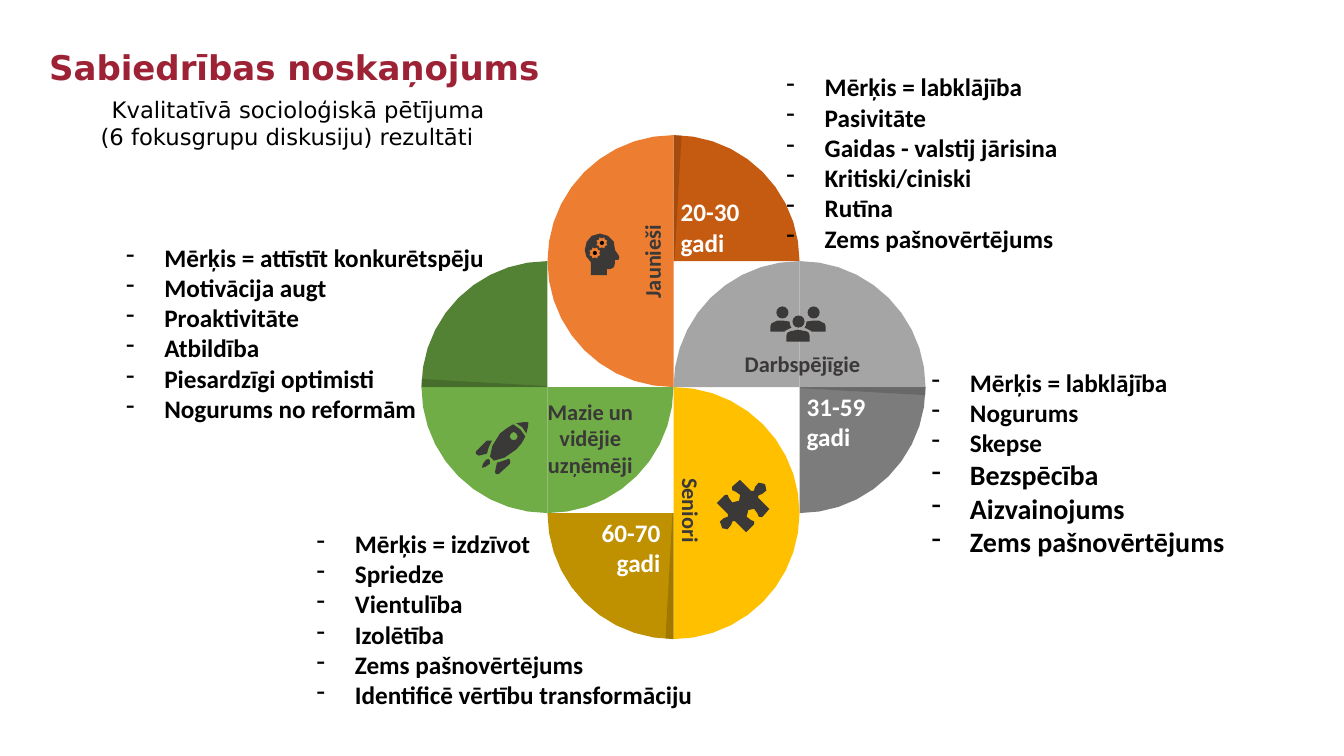
import math
import pptx
import pptx.dml.color
import pptx.enum.shapes
import pptx.enum.text
import pptx.oxml
import pptx.oxml.ns
import pptx.util
from dataclasses import dataclass

Inches = pptx.util.Inches
Align = pptx.enum.text.PP_ALIGN
Anchor = pptx.enum.text.MSO_ANCHOR


@dataclass(frozen=True)
class Theme:
    heading_font: str = "DejaVu Sans"
    body_font: str = "Calibri"
    title: str = "9D2235"
    text: str = "000000"
    icon: str = "3B3838"
    light: str = "FFFFFF"
    title_size: float = 24.3
    subtitle_size: float = 16.2
    label_size: int = 16
    body_size: int = 18
    large_size: int = 20


CENTRE_X, CENTRE_Y, RADIUS = 6.68, 3.84, 1.25
ARC_STEPS, CURVE_STEPS, GEAR_POINTS = 10, 2, 16
QUADRANTS = [(1, -1), (-1, -1), (-1, 1)]
WEDGE = [(0, -1.25), (0.01, -1.25), (0.08, -2.5), (0, -2.5)]
ARMS = [
    ("C55A11", "ED7D31", "20-30\vgadi", Align.LEFT, Anchor.BOTTOM),
    ("7C7C7C", "A5A5A5", "31-59\vgadi", Align.LEFT, Anchor.TOP),
    ("BF9000", "FFC000", "60-70\vgadi", Align.RIGHT, Anchor.TOP),
    ("548235", "70AD47", "", Align.LEFT, Anchor.TOP),
]
LABELS = [
    ("Mazie un vidējie uzņēmēji", (5.04, 3.89, 1.63, 0.91), 0, True),
    ("Jaunieši", (5.97, 2.41, 0.99, 0.37), 270, False),
    ("Darbspējīgie", (7.28, 3.42, 1.36, 0.37), 0, False),
    ("Seniori", (6.43, 4.88, 0.85, 0.37), 90, False),
]
FINDINGS = [
    ((9.24, 3.57, 3.25, 2.02), 3, ["Mērķis = labklājība", "Nogurums", "Skepse",
     "Bezspēcība", "Aizvainojums", "Zems pašnovērtējums"]),
    ((1.25, 2.33, 3.88, 1.92), 6, ["Mērķis = attīstīt konkurētspēju", "Motivācija augt",
     "Proaktivitāte", "Atbildība", "Piesardzīgi optimisti", "Nogurums no reformām"]),
    ((3.14, 5.17, 4.08, 1.92), 6, ["Mērķis = izdzīvot", "Spriedze", "Vientulība",
     "Izolētība", "Zems pašnovērtējums", "Identificē vērtību transformāciju"]),
    ((7.8, 0.64, 3.02, 1.92), 6, ["Mērķis = labklājība", "Pasivitāte",
     "Gaidas - valstij jārisina", "Kritiski/ciniski", "Rutīna", "Zems pašnovērtējums"]),
]
PUZZLE = """M 34 40 C 29 40 28 34 31 31 L 31 30 C 35 27 40 29 40 33 C 40 36 43 39 45 37
L 52 29 L 41 18 C 39 17 42 14 45 14 C 49 14 51 8 48 5 L 47 4 C 44 1 38 3 38 7
C 38 10 36 13 34 11 L 23 0 L 15 7 C 13 9 16 12 19 12 C 23 12 25 17 22 21 L 21 21
C 18 24 12 23 12 18 C 12 16 10 13 8 15 L 0 23 L 11 34 C 13 36 10 38 7 38
C 3 38 1 44 5 47 L 5 48 C 8 51 14 49 14 45 C 14 42 17 39 18 41 L 29 52 L 37 44
C 39 42 36 40 34 40"""
ROCKET = [
    "M 52 1 C 51 0 45 1 40 2 L 46 6 L 50 12 C 51 7 53 2 52 1",
    "M 16 19 L 13 19 L 11 19 L 0 30 C -1 31 0 34 3 34 L 11 32 C 12 28 13 24 16 19",
    "M 33 37 C 29 39 24 40 21 41 L 19 50 C 18 52 21 54 23 52 L 34 42 L 34 39",
    """M 37 3 C 33 5 29 8 24 12 C 17 20 14 29 14 35 L 18 39 C 23 38 33 36 40 28
    C 45 24 47 19 49 15 L 44 8 L 37 3
    M 40 18 C 39 19 36 19 35 18 C 33 16 33 14 35 12 C 36 10 39 10 40 12 C 42 14 42 16 40 18""",
    "M 14 39 C 13 38 13 36 10 38 C 8 40 5 45 6 46 C 7 47 12 44 14 42 L 14 39",
]
FRONT_BODY = "M 23 12 L 23 6 L 22 3 C 21 2 19 1 16 1 L 12 0 L 7 1 C 5 1 3 2 1 3 L 0 6 L 0 12"
BACK_BODY = """M 20 3 C 18 2 16 1 14 0 L 9 0 L 2 1 C 2 4 1 6 0 7 C 2 8 4 9 6 10
L 7 11 L 21 11 L 21 6 L 20 3"""
HEAD = """M 34 22 L 30 16 C 31 10 28 5 23 2 C 18 -1 12 -1 7 2 C 3 5 0 10 0 16
C 0 20 2 25 6 28 L 6 41 L 22 41 L 22 35 L 25 35 C 26 35 28 34 29 33
L 30 29 L 30 26 L 33 26 C 34 25 35 24 34 22"""
GEARS = [(5.97, 2.41), (5.9, 2.51)]


def turn(x, y, quarters):
    for _ in range(quarters):
        x, y = -y, x
    return x, y


def trace(outline_text, x, y, side=1):
    loops, tokens = [], iter(outline_text.split())
    for command in tokens:
        nums = [float(next(tokens)) for _ in range(6 if command == "C" else 2)]
        pts = [(x + side * a / 100, y + b / 100) for a, b in zip(nums[::2], nums[1::2])]
        if command == "M":
            loops.append(pts)
        elif command == "L":
            loops[-1] += pts
        else:
            curve = [loops[-1][-1]] + pts
            for i in range(1, CURVE_STEPS + 1):
                t = i / CURVE_STEPS
                weights = [(1 - t) ** 3, 3 * t * (1 - t) ** 2, 3 * t * t * (1 - t), t ** 3]
                loops[-1].append(tuple(sum(w * p[axis] for w, p in zip(weights, curve))
                                       for axis in (0, 1)))
    return loops


def gear(x, y):
    pts = []
    for i in range(GEAR_POINTS):
        r, angle = (0.06 if i % 2 else 0.045), math.tau * i / GEAR_POINTS
        pts.append((x + r * math.cos(angle), y + r * math.sin(angle)))
    return pts


class Canvas:
    def __init__(self, s, theme):
        self.s, self.theme = s, theme

    def paint(self, sp, color, alpha=None):
        sp.shadow.inherit = False
        sp.fill.solid()
        sp.fill.fore_color.rgb = pptx.dml.color.RGBColor.from_string(color)
        sp.line.fill.background()
        if alpha:
            clr = sp._element.spPr.find(".//" + pptx.oxml.ns.qn("a:srgbClr"))
            clr.append(pptx.oxml.parse_xml(
                f'<a:alpha {pptx.oxml.ns.nsdecls("a")} val="{alpha * 1000}"/>'))
        return sp

    def outline(self, loops, color, alpha=None):
        loops = [[(Inches(x), Inches(y)) for x, y in loop] for loop in loops]
        builder = self.s.shapes.build_freeform(*loops[0][0], scale=1.0)
        for i, loop in enumerate(loops):
            if i:
                builder.move_to(*loop[0])
            builder.add_line_segments(loop[1:], close=True)
        return self.paint(builder.convert_to_shape(), color, alpha)

    def dot(self, x, y, size, color):
        oval = pptx.enum.shapes.MSO_SHAPE.OVAL
        box = [Inches(v) for v in (x - size / 2, y - size / 2, size, size)]
        self.paint(self.s.shapes.add_shape(oval, *box), color)

    def frame(self, sp, insets, anchor, wrap=True):
        tf = sp.text_frame
        tf.word_wrap, tf.vertical_anchor = wrap, anchor
        tf.margin_left, tf.margin_top, tf.margin_right, tf.margin_bottom = map(Inches, insets)
        return tf

    def box(self, at, insets, anchor, wrap=True):
        sp = self.s.shapes.add_textbox(*map(Inches, at))
        return sp, self.frame(sp, insets, anchor, wrap)

    def style(self, p, size, color, bold=True, font=None, align=Align.LEFT):
        p.alignment = align
        for r in p.runs:
            r.font.name, r.font.size, r.font.bold = font or self.theme.body_font, pptx.util.Pt(size), bold
            r.font.color.rgb = pptx.dml.color.RGBColor.from_string(color)

    def indent(self, p, left, hanging=0, bullet=None):
        pPr = p._p.get_or_add_pPr()
        pPr.set("marL", str(Inches(left)))
        pPr.set("indent", str(Inches(-hanging)))
        if bullet:
            pPr.append(pptx.oxml.parse_xml(
                f'<a:buChar {pptx.oxml.ns.nsdecls("a")} char="{bullet}"/>'))

    def heading(self):
        t = self.theme
        tf = self.box((0.39, 0.46, 11.5, 1.45), (0.1, 0, 0.1, 0), Anchor.TOP)[1]
        tf.text = ("Sabiedrības noskaņojums\nKvalitatīvā socioloģiskā pētījuma\n"
                   "(6 fokusgrupu diskusiju) rezultāti")
        title, *subtitle = tf.paragraphs
        self.style(title, t.title_size, t.title, font=t.heading_font)
        for p, left in zip(subtitle, (0.62, 0.51)):
            self.style(p, t.subtitle_size, t.text, False, t.heading_font)
            self.indent(p, left)
        subtitle[0].space_before = pptx.util.Pt(6)

    def arm(self, quarters, dark, light, ages, align, anchor):
        dx, dy = turn(0, -RADIUS, quarters)
        hub = (CENTRE_X + dx, CENTRE_Y + dy)
        angles = [math.pi / 2 * i / ARC_STEPS for i in range(ARC_STEPS + 1)]
        for quadrant, color in zip(QUADRANTS, (dark, light, light)):
            sx, sy = turn(*quadrant, quarters)
            arc = [(hub[0] + sx * RADIUS * math.cos(a), hub[1] + sy * RADIUS * math.sin(a))
                   for a in angles]
            sp = self.outline([[hub] + arc], color)
            if color == dark and ages:
                right = 0.13 if align == Align.RIGHT else 0.07
                tf = self.frame(sp, (0.07, 0.04, right, 0.04), anchor)
                tf.text = ages
                self.style(tf.paragraphs[0], self.theme.body_size, self.theme.light, align=align)
        wedge = [turn(x, y, quarters) for x, y in WEDGE]
        self.outline([[(CENTRE_X + x, CENTRE_Y + y) for x, y in wedge]], self.theme.text, 16)

    def label(self, text, at, rotation, wrap):
        sp, tf = self.box(at, (0.1, 0.05, 0.1, 0.05), Anchor.MIDDLE, wrap)
        sp.rotation, tf.text = rotation, text
        self.style(tf.paragraphs[0], self.theme.label_size, self.theme.icon, align=Align.CENTER)

    def findings(self, at, regular, items):
        tf = self.box(at, (0, 0.05, 0, 0.05), Anchor.BOTTOM)[1]
        tf.text = "\n".join(items)
        for i, p in enumerate(tf.paragraphs):
            size = self.theme.body_size if i < regular else self.theme.large_size
            self.style(p, size, self.theme.text)
            self.indent(p, 0.38, 0.38, "-")

    def icons(self):
        color = self.theme.icon
        self.outline(trace(PUZZLE, 7.11, 4.76), color)
        for part in ROCKET:
            self.outline(trace(part, 4.72, 4.18), color)
        for x, y in ((7.76, 3.1), (8.07, 3.1), (7.92, 3.19)):
            self.dot(x, y, 0.12, color)
        self.outline(trace(FRONT_BODY, 7.8, 3.27), color)
        for x, side in ((7.98, 1), (7.85, -1)):
            self.outline(trace(BACK_BODY, x, 3.18, side), color)
        self.outline(trace(HEAD, 5.8, 2.32) + [gear(x, y) for x, y in GEARS], color)
        for x, y in GEARS:
            self.dot(x, y, 0.04, self.theme.text)


def main():
    prs = pptx.Presentation()
    prs.slide_width, prs.slide_height = Inches(13.33), Inches(7.5)
    canvas = Canvas(prs.slides.add_slide(prs.slide_layouts[6]), Theme())
    canvas.heading()
    for quarters, arm in enumerate(ARMS):
        canvas.arm(quarters, *arm)
    for label in LABELS:
        canvas.label(*label)
    canvas.icons()
    for group in FINDINGS:
        canvas.findings(*group)
    prs.save("out.pptx")


if __name__ == "__main__":
    main()
